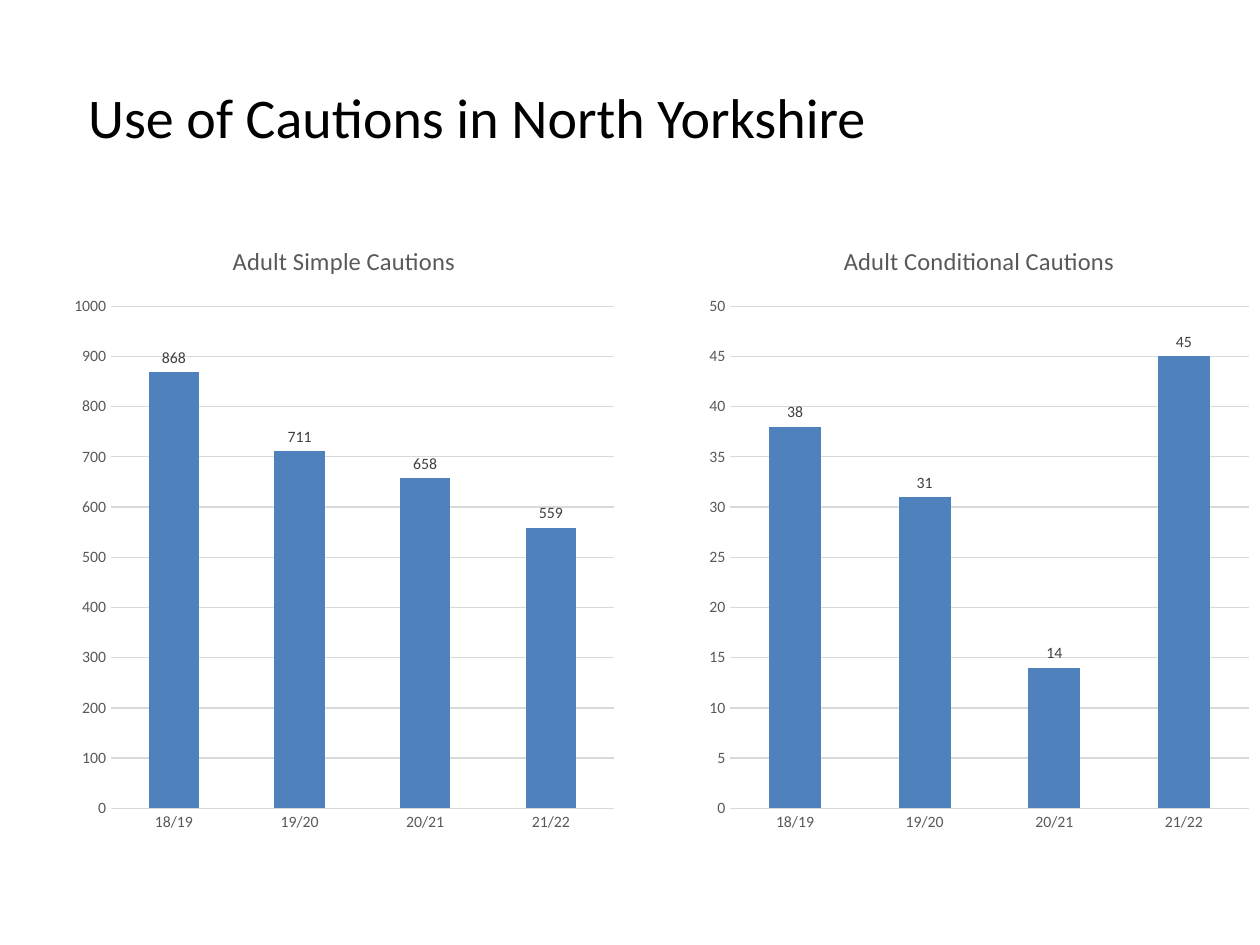
from pptx import Presentation
from pptx.chart.data import CategoryChartData
from pptx.dml.color import RGBColor
from pptx.enum.chart import XL_CHART_TYPE, XL_LABEL_POSITION, XL_TICK_MARK
from pptx.enum.text import MSO_ANCHOR, PP_ALIGN
from pptx.util import Pt

BLACK = RGBColor(0x00, 0x00, 0x00)
DARK = RGBColor(0x40, 0x40, 0x40)
GREY = RGBColor(0x59, 0x59, 0x59)
PALE = RGBColor(0xD9, 0xD9, 0xD9)
BLUE = RGBColor(0x4F, 0x81, 0xBD)


def style(font, size, color):
    font.name = "Calibri"
    font.size = Pt(size)
    font.bold = False
    font.color.rgb = color


deck = Presentation()
deck.slide_width, deck.slide_height = Pt(720), Pt(540)
slide = deck.slides.add_slide(deck.slide_layouts[5])

title = slide.shapes.title
title.left, title.top, title.width, title.height = Pt(36), Pt(21.6), Pt(569.5), Pt(90)
frame = title.text_frame
frame.text = "Use of Cautions in North Yorkshire"
frame.margin_left = Pt(14.4)
frame.vertical_anchor = MSO_ANCHOR.MIDDLE
frame.paragraphs[0].alignment = PP_ALIGN.LEFT
style(frame.paragraphs[0].runs[0].font, 32, BLACK)

years = ["18/19", "19/20", "20/21", "21/22"]
charts = [
    ("Adult Simple Cautions", 36, [868, 711, 658, 559], 1000, 100),
    ("Adult Conditional Cautions", 398.9, [38, 31, 14, 45], 50, 5),
]

for name, left, values, top, step in charts:
    data = CategoryChartData()
    data.categories = years
    data.add_series(name, values)
    chart = slide.shapes.add_chart(
        XL_CHART_TYPE.COLUMN_CLUSTERED, Pt(left), Pt(126), Pt(321.1), Pt(356.4), data
    ).chart
    style(chart.font, 10, BLACK)
    chart.has_legend = False
    chart.has_title = True
    head = chart.chart_title.text_frame
    head.text = name
    style(head.paragraphs[0].runs[0].font, 14, GREY)
    chart.chart_title.include_in_layout = False

    for axis in (chart.category_axis, chart.value_axis):
        axis.major_tick_mark = XL_TICK_MARK.NONE
        axis.minor_tick_mark = XL_TICK_MARK.NONE
        style(axis.tick_labels.font, 9, GREY)
    line = chart.category_axis.format.line
    line.color.rgb = PALE
    line.width = Pt(0.75)

    scale = chart.value_axis
    scale.minimum_scale, scale.maximum_scale, scale.major_unit = 0, top, step
    scale.format.line.fill.background()
    grid = scale.major_gridlines.format.line
    grid.color.rgb = PALE
    grid.width = Pt(0.75)

    plot = chart.plots[0]
    plot.gap_width = 150
    plot.vary_by_categories = False
    bars = plot.series[0]
    bars.format.fill.solid()
    bars.format.fill.fore_color.rgb = BLUE
    labels = bars.data_labels
    labels.show_value = True
    labels.position = XL_LABEL_POSITION.OUTSIDE_END
    style(labels.font, 9, DARK)

deck.save("out.pptx")
